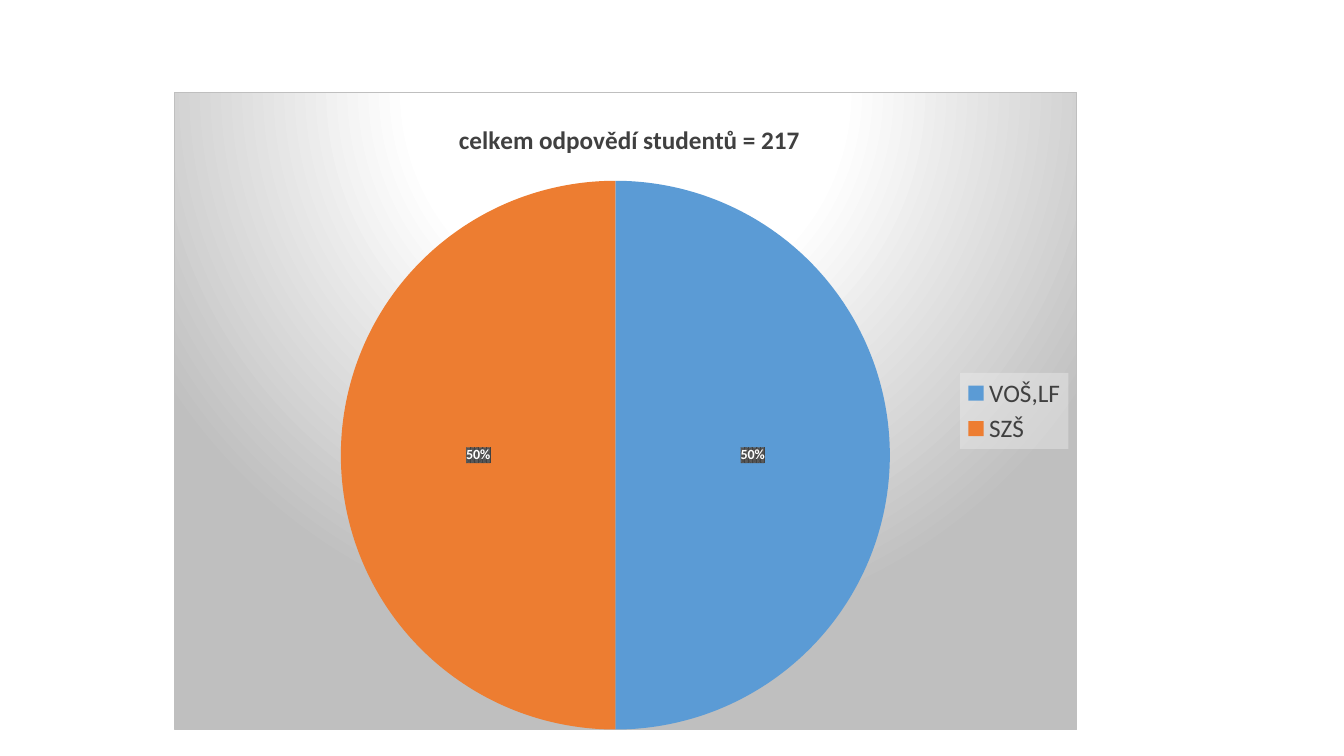
from lxml import etree
from pptx import Presentation
from pptx.chart import data
from pptx.dml.color import RGBColor
from pptx.enum import chart as kinds
from pptx.oxml import ns
from pptx.util import Pt

FONT = "Calibri"
HUES = {"blue": "5B9BD5", "orange": "ED7D31", "dark": "404040", "mid": "595959",
        "white": "FFFFFF", "pale": "F2F2F2", "grey": "BFBFBF"}
SHARES = {"VOŠ,LF": 50, "SZŠ": 50}


def style(font, size, hue, bold=False):
    """Set the face, size, colour and weight of a font."""
    font.name, font.size, font.bold = FONT, Pt(size), bold
    font.color.rgb = RGBColor.from_string(HUES[hue])


def tint(hue):
    """Return the XML of one colour."""
    return f'<a:srgbClr val="{HUES[hue]}"/>'


def paint(owner, fill):
    """Put shape properties with the given fill ahead of the text properties."""
    xml = f'<c:spPr {ns.nsdecls("c", "a")}>{fill}</c:spPr>'
    owner.find(ns.qn("c:txPr")).addprevious(etree.fromstring(xml))


def place(owner, index, **parts):
    """Give a chart part a manual layout in fractions of the chart."""
    for old in owner.findall(ns.qn("c:layout")):
        owner.remove(old)
    rules = {"xMode": "edge", "yMode": "edge", **parts}
    if "w" in parts:
        rules = {"layoutTarget": "inner", **rules}
    body = "".join(f'<c:{key} val="{val}"/>' for key, val in rules.items())
    xml = f'<c:layout {ns.nsdecls("c")}><c:manualLayout>{body}</c:manualLayout></c:layout>'
    owner.insert(index, etree.fromstring(xml))


def add_pie(slide):
    """Add the pie of shares and return its chart."""
    table = data.CategoryChartData()
    table.categories = list(SHARES)
    table.add_series("Series 1", list(SHARES.values()))
    frame = slide.shapes.add_chart(kinds.XL_CHART_TYPE.PIE, Pt(124.5), Pt(65.5),
                                   Pt(645), Pt(456), table)
    chart = frame.chart
    style(chart.font, 10, "dark")
    plot = chart.plots[0]
    plot.vary_by_categories = True
    for index, hue in enumerate(("blue", "orange")):
        fill = plot.series[0].points[index].format.fill
        fill.solid()
        fill.fore_color.rgb = RGBColor.from_string(HUES[hue])
    place(chart._chartSpace.chart.plotArea, 0, x=0.047, y=0.139, w=0.883, h=0.861)
    return chart


def add_title(chart, words):
    """Add the bold chart title."""
    title = chart.chart_title
    title.text_frame.text = words
    style(title.text_frame.paragraphs[0].runs[0].font, 18, "dark", True)
    place(title._element, 1, x=0.31, y=0.04)
    title.include_in_layout = False


def add_key(chart):
    """Add the legend on a translucent panel."""
    chart.has_legend = True
    key = chart.legend
    key.position = kinds.XL_LEGEND_POSITION.RIGHT
    key.include_in_layout = False
    style(key.font, 18, "dark")
    clear = tint("pale").replace("/>", '><a:alpha val="39000"/></a:srgbClr>')
    paint(key._element, f"<a:solidFill>{clear}</a:solidFill>")


def add_labels(chart):
    """Add percentage labels on a dark pattern."""
    labels = chart.plots[0].series[0].data_labels
    labels.show_percentage = True
    labels.show_value = False
    labels.number_format, labels.number_format_is_linked = "0%", False
    labels.position = kinds.XL_LABEL_POSITION.CENTER
    style(labels.font, 10, "white", True)
    paint(labels._element, f'<a:pattFill prst="pct75"><a:fgClr>{tint("dark")}</a:fgClr>'
                           f'<a:bgClr>{tint("mid")}</a:bgClr></a:pattFill>')


def add_ground(chart):
    """Add the radial background and the border of the chart."""
    stops = ((0, "white"), (39, "white"), (100, "grey"))
    marks = "".join(f'<a:gs pos="{pos * 1000}">{tint(hue)}</a:gs>' for pos, hue in stops)
    paint(chart._chartSpace,
          f'<a:gradFill><a:gsLst>{marks}</a:gsLst><a:path path="circle">'
          '<a:fillToRect l="50000" t="-80000" r="50000" b="180000"/></a:path></a:gradFill>'
          f'<a:ln w="{Pt(0.75)}"><a:solidFill>{tint("grey")}</a:solidFill></a:ln>')


def main():
    """Build the slide and save it."""
    deck = Presentation()
    deck.slide_width, deck.slide_height = Pt(960), Pt(540)
    slide = deck.slides.add_slide(deck.slide_layouts[6])
    chart = add_pie(slide)
    add_title(chart, "celkem odpovědí studentů = 217")
    add_key(chart)
    add_labels(chart)
    add_ground(chart)
    deck.save("out.pptx")


if __name__ == "__main__":
    main()
